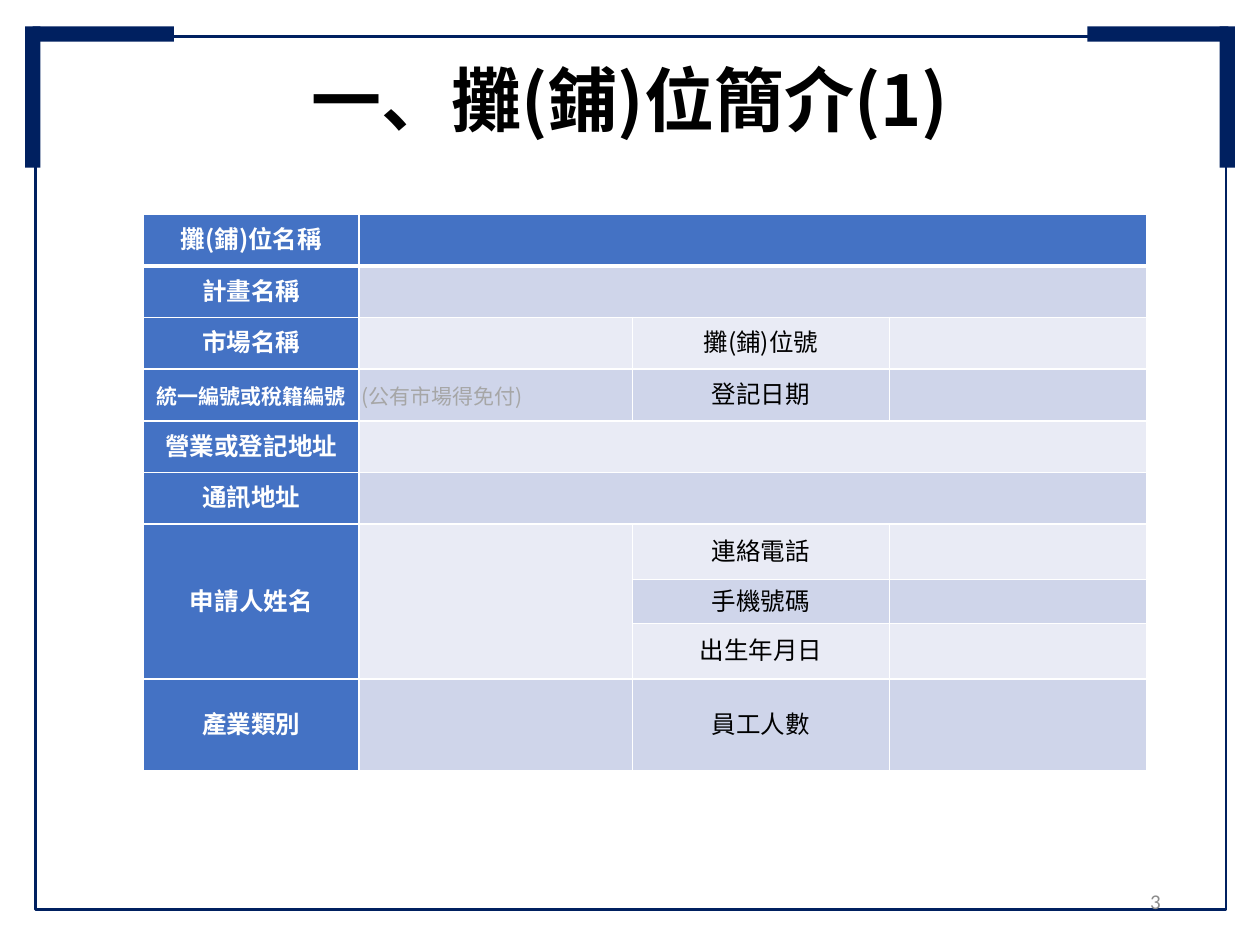
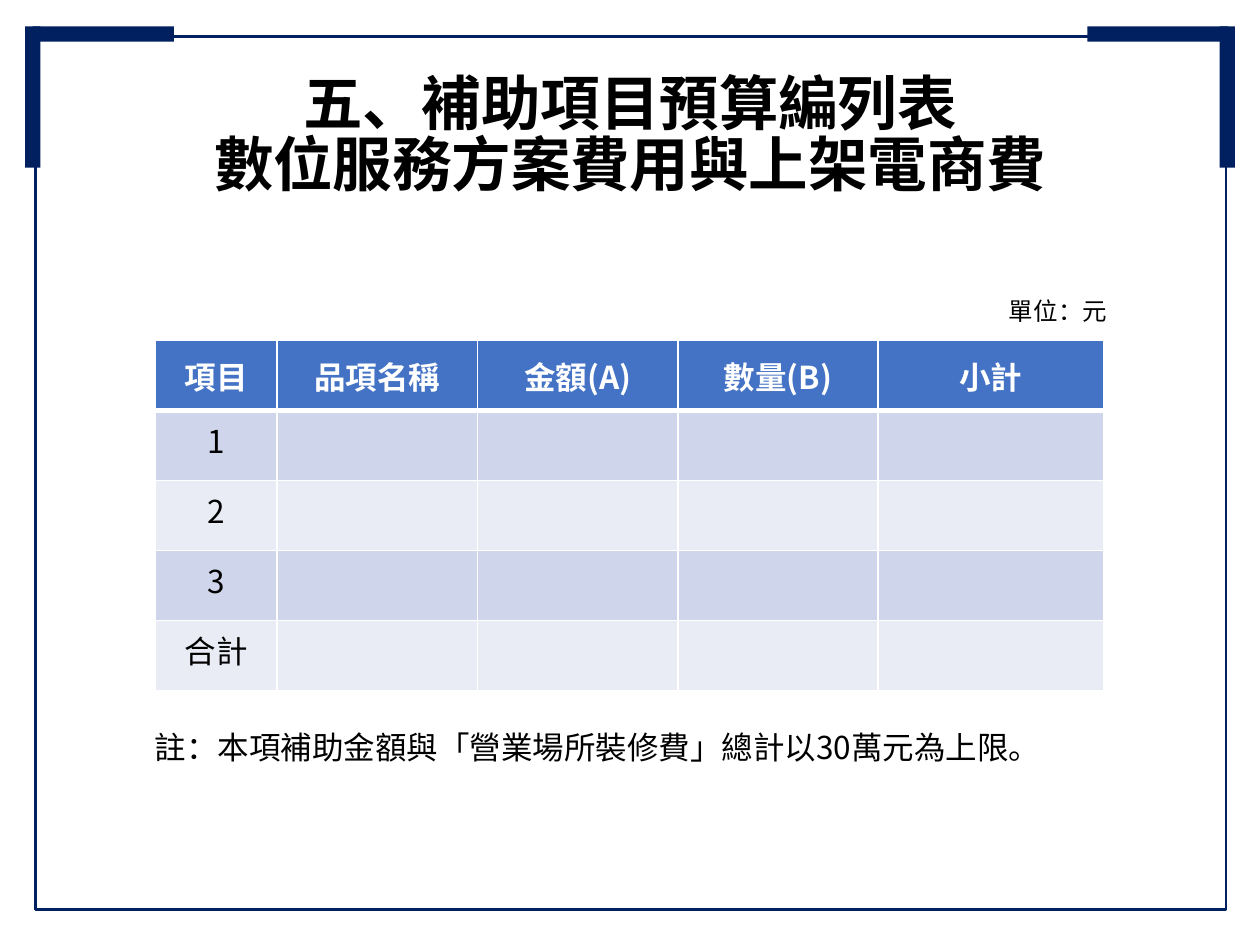
from lxml.etree import SubElement
from pptx import Presentation
from pptx.dml.color import RGBColor
from pptx.enum.shapes import MSO_SHAPE as Preset
from pptx.enum.text import MSO_ANCHOR as Anchor, MSO_AUTO_SIZE as AutoSize, PP_ALIGN as Align
from pptx.oxml.ns import qn
from pptx.util import Inches, Pt

FONT = "Noto Sans CJK SC"
NAVY, BLUE, WHITE, BLACK = "002060", "4472C4", "FFFFFF", "000000"
BANDS = ("E9EBF5", "CFD5EA")
HINT_GREY, NUMBER_GREY = "A6A6A6", "8C8C8C"
TITLE_ONLY = 5


def color(hex_code):
    return RGBColor.from_string(hex_code)


def write(paragraph, text, size, hex_code=BLACK, bold=False, align=Align.LEFT, font=FONT):
    run = paragraph.add_run()
    run.text = text
    run.font.size, run.font.bold, run.font.name = Pt(size), bold, font
    run.font.color.rgb = color(hex_code)
    SubElement(run.font._element, qn("a:ea"), typeface=font)
    paragraph.alignment = align


def add_text(slide, box, text, size, **style):
    frame = slide.shapes.add_textbox(*map(Inches, box)).text_frame
    frame.word_wrap = True
    write(frame.paragraphs[0], text, size, **style)
    return frame


def add_rect(slide, box, fill=None, line=None):
    rect = slide.shapes.add_shape(Preset.RECTANGLE, *map(Inches, box))
    rect.shadow.inherit = False
    if fill:
        rect.fill.solid()
        rect.fill.fore_color.rgb = color(fill)
    else:
        rect.fill.background()
    if line:
        rect.line.color.rgb = color(line)
        rect.line.width = Pt(1.5)
    else:
        rect.line.fill.background()


# Page frame with heavy top corners
def add_frame(slide):
    add_rect(slide, (0.28, 0.29, 9.45, 6.93), line=NAVY)
    length, thick, top = 1.12, 0.12, 0.21
    for bar_left, post_left in ((0.26, 0.2), (8.63, 9.68)):
        add_rect(slide, (bar_left, top, length, thick), fill=NAVY)
        add_rect(slide, (post_left, top, thick, length), fill=NAVY)


def add_titled_slide(deck, lines, box, size, spacing=1.0):
    slide = deck.slides.add_slide(deck.slide_layouts[TITLE_ONLY])
    add_frame(slide)
    title = slide.shapes.title
    title.left, title.top, title.width, title.height = map(Inches, box)
    frame = title.text_frame
    frame.auto_size, frame.vertical_anchor = AutoSize.NONE, Anchor.MIDDLE
    for index, line in enumerate(lines):
        paragraph = frame.add_paragraph() if index else frame.paragraphs[0]
        paragraph.line_spacing = spacing
        write(paragraph, line, size, bold=True, align=Align.CENTER)
    return slide


def add_borders(cell, row):
    """White rules, heavier below the header row."""
    top, bottom = (3 if row == 1 else 1), (3 if row == 0 else 1)
    for side, points in (("L", 1), ("R", 1), ("T", top), ("B", bottom)):
        line = SubElement(cell._tc.get_or_add_tcPr(), qn(f"a:ln{side}"), w=str(Pt(points)))
        SubElement(SubElement(line, qn("a:solidFill")), qn("a:srgbClr"), val=WHITE)


def add_table(slide, left, top, widths, heights, header_column=False):
    """Banded table; returns it with a test for header cells."""
    table = slide.shapes.add_table(len(heights), len(widths), Inches(left), Inches(top),
                                   Inches(sum(widths)), Inches(sum(heights))).table
    for column, width in zip(table.columns, widths):
        column.width = Inches(width)
    for row, height in zip(table.rows, heights):
        row.height = Inches(height)

    def is_header(row, column):
        return row == 0 or (header_column and column == 0)

    for r in range(len(heights)):
        for c in range(len(widths)):
            cell = table.cell(r, c)
            add_borders(cell, r)
            cell.fill.solid()
            cell.fill.fore_color.rgb = color(BLUE if is_header(r, c) else BANDS[r % 2])
    return table, is_header


# Stall profile form
def add_profile_form(slide, left, top):
    labels = [
        ("攤(鋪)位名稱", "", ""),
        ("計畫名稱", "", ""),
        ("市場名稱", "", "攤(鋪)位號"),
        ("統一編號或稅籍編號", "(公有市場得免付)", "登記日期"),
        ("營業或登記地址", "", ""),
        ("通訊地址", "", ""),
        ("申請人姓名", "", "連絡電話"),
        ("", "", "手機號碼"),
        ("", "", "出生年月日"),
        ("產業類別", "", "員工人數"),
    ]
    table, is_header = add_table(slide, left, top, [1.71, 2.17, 2.04, 2.04],
                                 [0.41] * 6 + [0.44, 0.35, 0.44, 0.73], header_column=True)
    for r, row_labels in enumerate(labels):
        for c, label in enumerate(row_labels + ("",)):
            cell = table.cell(r, c)
            cell.margin_left = cell.margin_right = Inches(0.02)
            cell.margin_top = cell.margin_bottom = 0
            cell.vertical_anchor = Anchor.MIDDLE
            paragraph = cell.text_frame.paragraphs[0]
            paragraph.line_spacing = Pt(18)
            if not label:
                continue
            header, hint = is_header(r, c), c == 1
            write(paragraph, label, 12 if r == 3 and c < 2 else 14,
                  WHITE if header else HINT_GREY if hint else BLACK, header,
                  Align.JUSTIFY if hint else Align.CENTER)
    for r in (0, 1, 4, 5):
        table.cell(r, 1).merge(table.cell(r, 3))
    for c in (0, 1):
        table.cell(6, c).merge(table.cell(8, c))


# Subsidy budget table
def add_budget_table(slide, left, top):
    headings = ["項目", "品項名稱", "金額(A)", "數量(B)", "小計"]
    items = ["1", "2", "3", "合計"]
    table, _ = add_table(slide, left, top, [0.97, 1.59, 1.59, 1.59, 1.79], [0.556] * 5)
    for c, heading in enumerate(headings):
        cell = table.cell(0, c)
        cell.vertical_anchor = Anchor.MIDDLE
        write(cell.text_frame.paragraphs[0], heading, 18, WHITE, True, Align.CENTER)
    for r, item in enumerate(items, 1):
        write(table.cell(r, 0).text_frame.paragraphs[0], item, 18, align=Align.CENTER)


def build_profile_slide(deck):
    slide = add_titled_slide(deck, ["一、攤(鋪)位簡介(1)"], (0.5, 0.28, 9, 1.01), 40)
    add_profile_form(slide, 1.14, 1.7)
    number = add_text(slide, (7.06, 6.95, 2.25, 0.4), "3", 12, hex_code=NUMBER_GREY,
                      align=Align.RIGHT, font="Calibri")
    number.vertical_anchor = Anchor.MIDDLE


def build_budget_slide(deck):
    slide = add_titled_slide(deck, ["五、補助項目預算編列表", "數位服務方案費用與上架電商費"],
                             (0.5, 0.59, 9, 1.01), 34, spacing=0.85)
    add_budget_table(slide, 1.23, 2.7)
    add_text(slide, (7.91, 2.3, 1.3, 0.34), "單位：元", 14)
    note = add_text(slide, (1.13, 5.81, 7.9, 0.33),
                    "註：本項補助金額與「營業場所裝修費」總計以30萬元為上限。", 18)
    paragraph = note.paragraphs[0]
    paragraph.line_spacing = Pt(16)
    indent = Inches(0.38)
    properties = paragraph._p.get_or_add_pPr()
    properties.set("marL", str(indent))
    properties.set("indent", str(-indent))


def main():
    deck = Presentation()
    deck.slide_width, deck.slide_height = Inches(10), Inches(7.5)
    build_profile_slide(deck)
    build_budget_slide(deck)
    deck.save("out.pptx")


if __name__ == "__main__":
    main()
